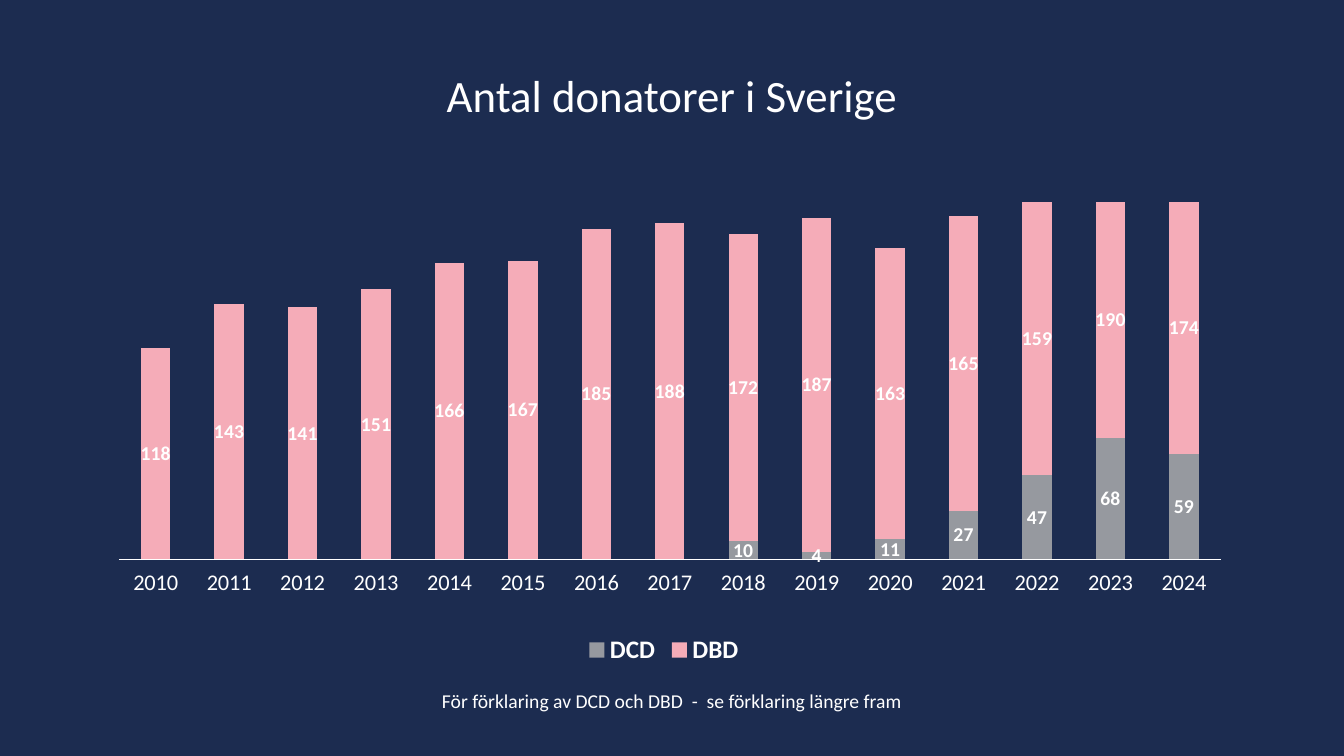
"""Build a slide with a stacked column chart of organ donors in Sweden."""
from dataclasses import dataclass

from lxml.etree import SubElement
from pptx import Presentation
from pptx.chart.chart import Chart
from pptx.chart.data import CategoryChartData
from pptx.chart.series import BarSeries
from pptx.dml.color import RGBColor
from pptx.enum.chart import XL_CHART_TYPE as ChartType
from pptx.enum.chart import XL_LABEL_POSITION as LabelPosition
from pptx.enum.chart import XL_LEGEND_POSITION as LegendPosition
from pptx.enum.chart import XL_TICK_LABEL_POSITION as TickLabelPosition
from pptx.enum.chart import XL_TICK_MARK as TickMark
from pptx.enum.text import MSO_ANCHOR as Anchor
from pptx.enum.text import PP_ALIGN as Align
from pptx.oxml.ns import qn
from pptx.slide import Slide
from pptx.text.text import Font, TextFrame
from pptx.util import Inches, Pt

NAVY = RGBColor(0x1C, 0x2C, 0x50)
WHITE = RGBColor(0xFF, 0xFF, 0xFF)
GREY = RGBColor(0x96, 0x99, 0x9F)
PINK = RGBColor(0xF5, 0xAC, 0xB8)
FONT_NAME = "Calibri"
YEARS = [str(year) for year in range(2010, 2025)]


@dataclass(frozen=True)
class DonorGroup:
    name: str
    counts: list[int | None]
    color: RGBColor


DONOR_GROUPS = [
    DonorGroup("DCD", [None] * 8 + [10, 4, 11, 27, 47, 68, 59], GREY),
    DonorGroup("DBD", [118, 143, 141, 151, 166, 167, 185, 188,
                       172, 187, 163, 165, 159, 190, 174], PINK),
]


def format_font(font: Font, size: float, bold: bool = False) -> None:
    font.name = FONT_NAME
    font.size = Pt(size)
    font.bold = bold
    font.color.rgb = WHITE


def write_text(frame: TextFrame, text: str, *, size: float,
               anchor: Anchor = Anchor.TOP, line_spacing: float = 1.0) -> None:
    frame.word_wrap = True
    frame.vertical_anchor = anchor
    para = frame.paragraphs[0]
    para.alignment = Align.CENTER
    para.line_spacing = line_spacing
    span = para.add_run()
    span.text = text
    format_font(span.font, size)


def place_plot(chart: Chart, **fractions: float) -> None:
    plot_area = chart.plots[0]._element.getparent()
    layout = plot_area.get_or_add_layout() if hasattr(plot_area, "get_or_add_layout") \
        else plot_area.find(qn("c:layout"))
    if layout is None:
        layout = SubElement(plot_area, qn("c:layout"))
        plot_area.insert(0, layout)
    manual = SubElement(layout, qn("c:manualLayout"))
    settings = {"layoutTarget": "inner", "xMode": "edge", "yMode": "edge", **fractions}
    for tag, setting in settings.items():
        SubElement(manual, qn(f"c:{tag}")).set("val", str(setting))


def format_series(series: BarSeries, group: DonorGroup) -> None:
    series.format.fill.solid()
    series.format.fill.fore_color.rgb = group.color
    series.invert_if_negative = False
    labels = series.data_labels
    labels.show_value = True
    labels.position = LabelPosition.CENTER
    format_font(labels.font, 14, bold=True)


def add_donor_chart(page: Slide) -> None:
    chart_data = CategoryChartData()
    chart_data.categories = YEARS
    for group in DONOR_GROUPS:
        chart_data.add_series(group.name, group.counts)
    chart = page.shapes.add_chart(
        ChartType.COLUMN_STACKED, Inches(0.71), Inches(1.86),
        Inches(11.75), Inches(4.79), chart_data).chart
    chart.has_title = False
    format_font(chart.font, 10)
    place_plot(chart, x=0.04, y=0.03, w=0.93, h=0.74)

    plot = chart.plots[0]
    plot.gap_width = 150
    plot.overlap = 100
    plot.vary_by_categories = False
    for series, group in zip(plot.series, DONOR_GROUPS):
        format_series(series, group)

    years = chart.category_axis
    years.major_tick_mark = TickMark.NONE
    years.tick_label_position = TickLabelPosition.LOW
    years.format.line.color.rgb = WHITE
    years.format.line.width = Pt(0.75)
    format_font(years.tick_labels.font, 16)

    counts = chart.value_axis
    counts.minimum_scale = 0
    counts.maximum_scale = 200
    counts.major_unit = 20
    counts.has_major_gridlines = False
    counts.visible = False

    chart.has_legend = True
    chart.legend.position = LegendPosition.BOTTOM
    chart.legend.include_in_layout = False
    format_font(chart.legend.font, 18, bold=True)


def main() -> None:
    deck = Presentation()
    deck.slide_width, deck.slide_height = Inches(13.33), Inches(7.5)
    page = deck.slides.add_slide(deck.slide_layouts.get_by_name("Title Only"))
    page.background.fill.solid()
    page.background.fill.fore_color.rgb = NAVY

    title = page.shapes.title
    title.left, title.top = Inches(1.67), Inches(0.42)
    title.width, title.height = Inches(9.99), Inches(0.84)
    write_text(title.text_frame, "Antal donatorer i Sverige", size=32,
               anchor=Anchor.BOTTOM, line_spacing=0.9)

    add_donor_chart(page)

    footnote = page.shapes.add_textbox(
        Inches(1.06), Inches(6.79), Inches(11.21), Inches(0.34))
    write_text(footnote.text_frame,
               "För förklaring av DCD och DBD  -  se förklaring längre fram", size=14)
    deck.save("out.pptx")


if __name__ == "__main__":
    main()
